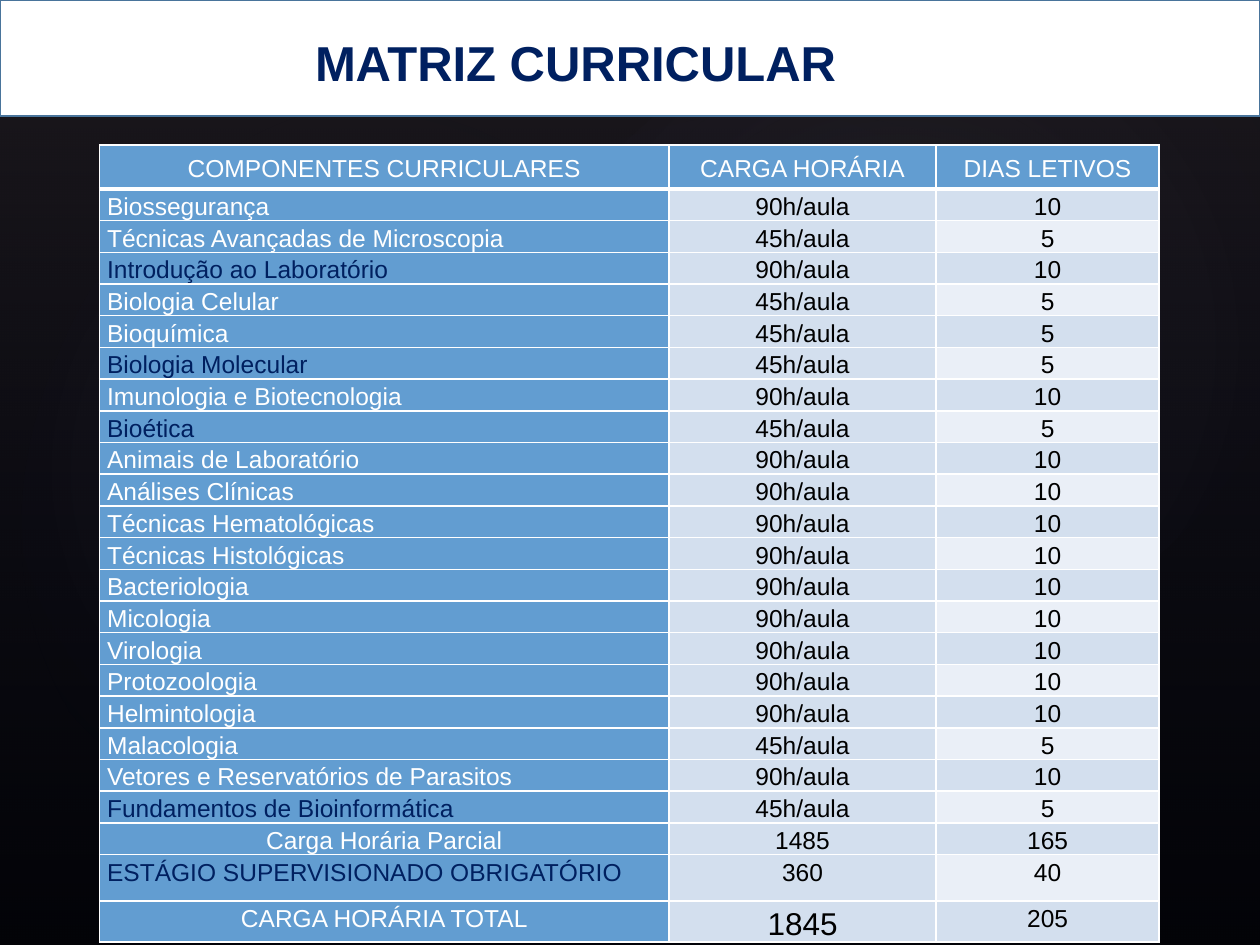
from dataclasses import dataclass
from typing import NamedTuple

from lxml.etree import SubElement
from pptx import Presentation
from pptx.dml.color import RGBColor as RGB
from pptx.enum.shapes import MSO_SHAPE as Shape
from pptx.enum.text import MSO_ANCHOR as Anchor, MSO_AUTO_SIZE as AutoSize, PP_ALIGN as Align
from pptx.oxml import parse_xml
from pptx.oxml.ns import nsdecls, qn
from pptx.util import Emu, Inches, Pt


@dataclass(frozen=True)
class Theme:
    font: str = "Arial"
    title_size: float = 28
    body_size: float = 14
    total_size: float = 18
    line_spacing: float = 1.15
    white: str = "FFFFFF"
    black: str = "000000"
    navy: str = "002060"
    blue: str = "629DD1"
    band_dark: str = "D3DFEE"
    band_light: str = "EAEFF7"
    frame: str = "49749B"
    veil: str = "504652"
    night: str = "242852"
    glow: str = "C4BCC6"


class Box(NamedTuple):
    x: float
    y: float
    w: float
    h: float


class Stop(NamedTuple):
    pos: int
    color: str
    alpha: int


class Glow(NamedTuple):
    box: Box
    rotation: float
    alpha: int


class Course(NamedTuple):
    name: str
    hours: int
    color: str = Theme.white
    align: Align = Align.LEFT
    unit: str = "h/aula"
    size: float = Theme.body_size


T = Theme()
WIDTH, HEIGHT = Inches(10), Inches(7.5)
HOURS_PER_DAY = 9
FULL = Box(0, 0, 100, 100)
BAND = Box(0, 0, 100, 12.27)
TITLE = Box(24, 2.53, 44.1, 8.13)
TABLE_X, TABLE_Y = 7.9, 15.33
COLUMNS = (45.2, 21.2, 17.7)
HEADER_ROW, COURSE_ROW, INTERNSHIP_ROW, TOTAL_ROW = 4.67, 3.2, 4.93, 4.13
HEADERS = ("COMPONENTES CURRICULARES", "CARGA HORÁRIA", "DIAS LETIVOS")
GLOWS = (
    Glow(Box(15, 15.2, 79.2, 83.2), 328.7, 7),
    Glow(Box(-3, 17.07, 60.6, 65.33), 294.3, 8),
    Glow(Box(35.8, 1.73, 70.9, 69.33), 328.7, 8),
)
COURSES = (
    Course("Biossegurança", 90),
    Course("Técnicas Avançadas de Microscopia", 45),
    Course("Introdução ao Laboratório", 90, T.navy),
    Course("Biologia Celular", 45),
    Course("Bioquímica", 45),
    Course("Biologia Molecular", 45, T.navy),
    Course("Imunologia e Biotecnologia", 90),
    Course("Bioética", 45, T.navy),
    Course("Animais de Laboratório", 90),
    Course("Análises Clínicas", 90),
    Course("Técnicas Hematológicas", 90),
    Course("Técnicas Histológicas", 90),
    Course("Bacteriologia", 90),
    Course("Micologia", 90),
    Course("Virologia", 90),
    Course("Protozoologia", 90),
    Course("Helmintologia", 90),
    Course("Malacologia", 45),
    Course("Vetores e Reservatórios de Parasitos", 90),
    Course("Fundamentos de Bioinformática", 45, T.navy),
    Course("Carga Horária Parcial", 1485, align=Align.CENTER, unit=""),
    Course("ESTÁGIO SUPERVISIONADO OBRIGATÓRIO", 360, T.navy, unit=""),
    Course("CARGA HORÁRIA TOTAL", 1845, align=Align.CENTER, unit="", size=T.total_size),
)


def across(share: float) -> Emu:
    return Emu(round(WIDTH * share / 100))


def down(share: float) -> Emu:
    return Emu(round(HEIGHT * share / 100))


def place(box: Box) -> tuple[Emu, Emu, Emu, Emu]:
    return across(box.x), down(box.y), across(box.w), down(box.h)


def add_run(p, text: str, size: float, color: str, bold: bool = False) -> None:
    r = p.add_run()
    r.text = text
    r.font.name, r.font.size, r.font.bold = T.font, Pt(size), bold
    r.font.color.rgb = RGB.from_string(color)


def add_gradient(s, kind: Shape, box: Box, stops: tuple[Stop, ...], direction: str, rotation: float = 0) -> None:
    sp = s.shapes.add_shape(kind, *place(box))
    sp.shadow.inherit = False
    sp.line.fill.background()
    sp.rotation = rotation
    colors = "".join(
        f'<a:gs pos="{stop.pos * 1000}"><a:srgbClr val="{stop.color}">'
        f'<a:alpha val="{stop.alpha * 1000}"/></a:srgbClr></a:gs>'
        for stop in stops
    )
    fill = parse_xml(f'<a:gradFill {nsdecls("a")}><a:gsLst>{colors}</a:gsLst>{direction}</a:gradFill>')
    sp.element.spPr.find(qn("a:prstGeom")).addnext(fill)


def add_backdrop(s) -> None:
    s.background.fill.solid()
    s.background.fill.fore_color.rgb = RGB.from_string(T.black)
    linear = '<a:lin ang="5400000" scaled="0"/>'
    radial = '<a:path path="circle"><a:fillToRect l="50000" t="50000" r="50000" b="50000"/></a:path>'
    add_gradient(s, Shape.RECTANGLE, FULL, (Stop(0, T.veil, 36), Stop(100, T.night, 10)), linear)
    for glow in GLOWS:
        stops = (Stop(0, T.glow, glow.alpha), Stop(58, T.night, 0))
        add_gradient(s, Shape.OVAL, glow.box, stops, radial, glow.rotation)


def fill_cell(cell, text: str, fill: str, color: str, align: Align, size: float, top: float, bottom: float) -> None:
    cell.margin_left = cell.margin_right = Inches(0.06)
    cell.margin_top = cell.margin_bottom = 0
    p = cell.text_frame.paragraphs[0]
    p.alignment, p.line_spacing = align, T.line_spacing
    add_run(p, text, size, color)
    tc_pr = cell._tc.get_or_add_tcPr()
    for side, width in (("L", 1), ("R", 1), ("T", top), ("B", bottom)):
        ln = SubElement(tc_pr, qn(f"a:ln{side}"), w=str(Pt(width)))
        SubElement(SubElement(ln, qn("a:solidFill")), qn("a:srgbClr"), val=T.white)
    cell.fill.solid()
    cell.fill.fore_color.rgb = RGB.from_string(fill)


def add_curriculum(s) -> None:
    heights = (HEADER_ROW, *[COURSE_ROW] * (len(COURSES) - 2), INTERNSHIP_ROW, TOTAL_ROW)
    box = Box(TABLE_X, TABLE_Y, sum(COLUMNS), sum(heights))
    table = s.shapes.add_table(len(heights), len(COLUMNS), *place(box)).table
    table.first_row = table.horz_banding = False
    for column, share in zip(table.columns, COLUMNS):
        column.width = across(share)
    for row, share in zip(table.rows, heights):
        row.height = down(share)
    for col, header in enumerate(HEADERS):
        cell = table.cell(0, col)
        cell.vertical_anchor = Anchor.MIDDLE
        fill_cell(cell, header, T.blue, T.white, Align.CENTER, T.body_size, 1, 3)
    for row, course in enumerate(COURSES, start=1):
        top = 3 if row == 1 else 1
        band = T.band_dark if row % 2 else T.band_light
        days = str(course.hours // HOURS_PER_DAY)
        cells = (
            (course.name, T.blue, course.color, course.align, T.body_size),
            (f"{course.hours}{course.unit}", T.band_dark, T.black, Align.CENTER, course.size),
            (days, band, T.black, Align.CENTER, T.body_size),
        )
        for col, values in enumerate(cells):
            fill_cell(table.cell(row, col), *values, top, 1)


def add_title(s) -> None:
    band = s.shapes.add_shape(Shape.RECTANGLE, *place(BAND))
    band.shadow.inherit = False
    band.fill.solid()
    band.fill.fore_color.rgb = RGB.from_string(T.white)
    band.line.color.rgb = RGB.from_string(T.frame)
    band.line.width = Pt(1.5)
    title = s.shapes.title
    title.left, title.top, title.width, title.height = place(TITLE)
    tf = title.text_frame
    tf.auto_size, tf.vertical_anchor = AutoSize.NONE, Anchor.MIDDLE
    p = tf.paragraphs[0]
    p.alignment = Align.LEFT
    add_run(p, "MATRIZ CURRICULAR", T.title_size, T.navy, bold=True)
    band.element.addnext(title.element)


def main() -> None:
    prs = Presentation()
    prs.slide_width, prs.slide_height = WIDTH, HEIGHT
    s = prs.slides.add_slide(prs.slide_layouts[5])
    add_backdrop(s)
    add_curriculum(s)
    add_title(s)
    prs.save("out.pptx")


if __name__ == "__main__":
    main()
